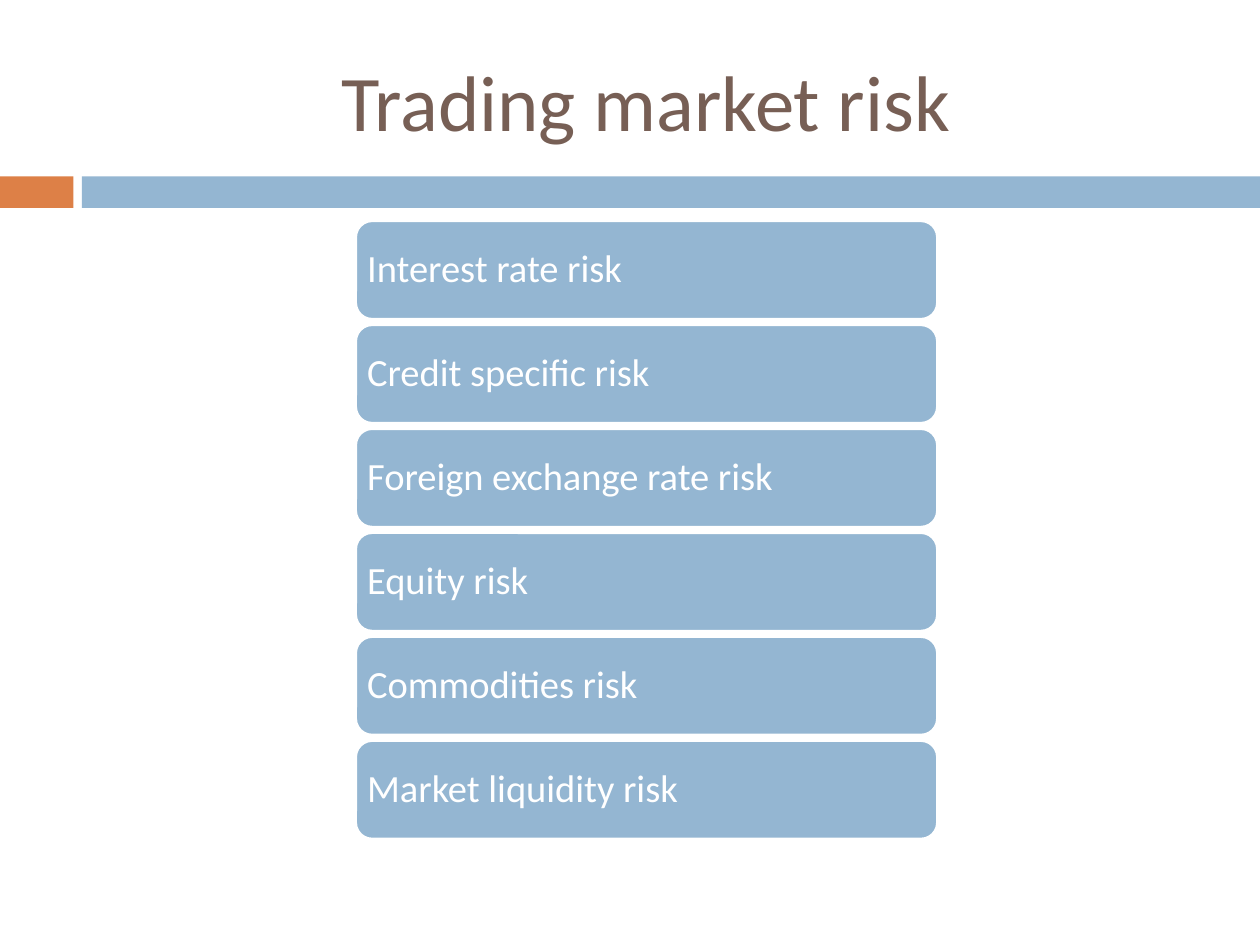
from pptx import Presentation
from pptx.dml.color import RGBColor
from pptx.enum import shapes, text
from pptx.util import Pt

BLUE = RGBColor(0x94, 0xB6, 0xD2)
ORANGE = RGBColor(0xDD, 0x80, 0x47)
BROWN = RGBColor(0x77, 0x5F, 0x55)
WHITE = RGBColor(0xFF, 0xFF, 0xFF)

TITLE = "Trading market risk"
RISKS = [
    "Interest rate risk",
    "Credit specific risk",
    "Foreign exchange rate risk",
    "Equity risk",
    "Commodities risk",
    "Market liquidity risk",
]

# left, top, width, height in points
TITLE_BOX = (48, 18, 642, 78)
BANDS = [((0, 100.8, 42, 18), ORANGE), ((46.8, 100.8, 673.2, 18), BLUE)]
CARD_LEFT, CARD_TOP, CARD_WIDTH, CARD_HEIGHT = 203.3, 126.2, 332.4, 56.2
CARD_STEP = 59.4

CARD_FRAME = {
    "word_wrap": True,
    "vertical_anchor": text.MSO_ANCHOR.MIDDLE,
    "margin_left": Pt(3.8),
    "margin_right": Pt(3.8),
    "margin_top": Pt(1),
    "margin_bottom": Pt(1),
}
TITLE_FRAME = {"word_wrap": True, "vertical_anchor": text.MSO_ANCHOR.MIDDLE}
CARD_PARAGRAPH = {"alignment": text.PP_ALIGN.LEFT, "line_spacing": 0.9}
TITLE_PARAGRAPH = {"alignment": text.PP_ALIGN.CENTER}


def apply(target, values):
    for name, value in values.items():
        setattr(target, name, value)


def write(shape, words, size, color, frame_format, paragraph_format):
    frame = shape.text_frame
    frame.text = words
    apply(frame, frame_format)
    paragraph = frame.paragraphs[0]
    apply(paragraph, paragraph_format)
    apply(paragraph.font, {"name": "Calibri", "size": Pt(size)})
    paragraph.font.color.rgb = color


def add_block(slide, kind, box, fill):
    shape = slide.shapes.add_shape(kind, *map(Pt, box))
    shape.shadow.inherit = False
    shape.fill.solid()
    shape.fill.fore_color.rgb = fill
    shape.line.fill.background()
    return shape


def main():
    presentation = Presentation()
    apply(presentation, {"slide_width": Pt(720), "slide_height": Pt(540)})
    slide = presentation.slides.add_slide(presentation.slide_layouts[5])

    for box, color in BANDS:
        add_block(slide, shapes.MSO_SHAPE.RECTANGLE, box, color)

    title = slide.shapes.title
    apply(title, dict(zip(("left", "top", "width", "height"), map(Pt, TITLE_BOX))))
    write(title, TITLE, 45, BROWN, TITLE_FRAME, TITLE_PARAGRAPH)

    for index, risk in enumerate(RISKS):
        box = (CARD_LEFT, CARD_TOP + index * CARD_STEP, CARD_WIDTH, CARD_HEIGHT)
        card = add_block(slide, shapes.MSO_SHAPE.ROUNDED_RECTANGLE, box, BLUE)
        card.line.color.rgb = WHITE
        card.line.width = Pt(1.5)
        write(card, risk, 22, WHITE, CARD_FRAME, CARD_PARAGRAPH)

    presentation.save("out.pptx")


if __name__ == "__main__":
    main()
